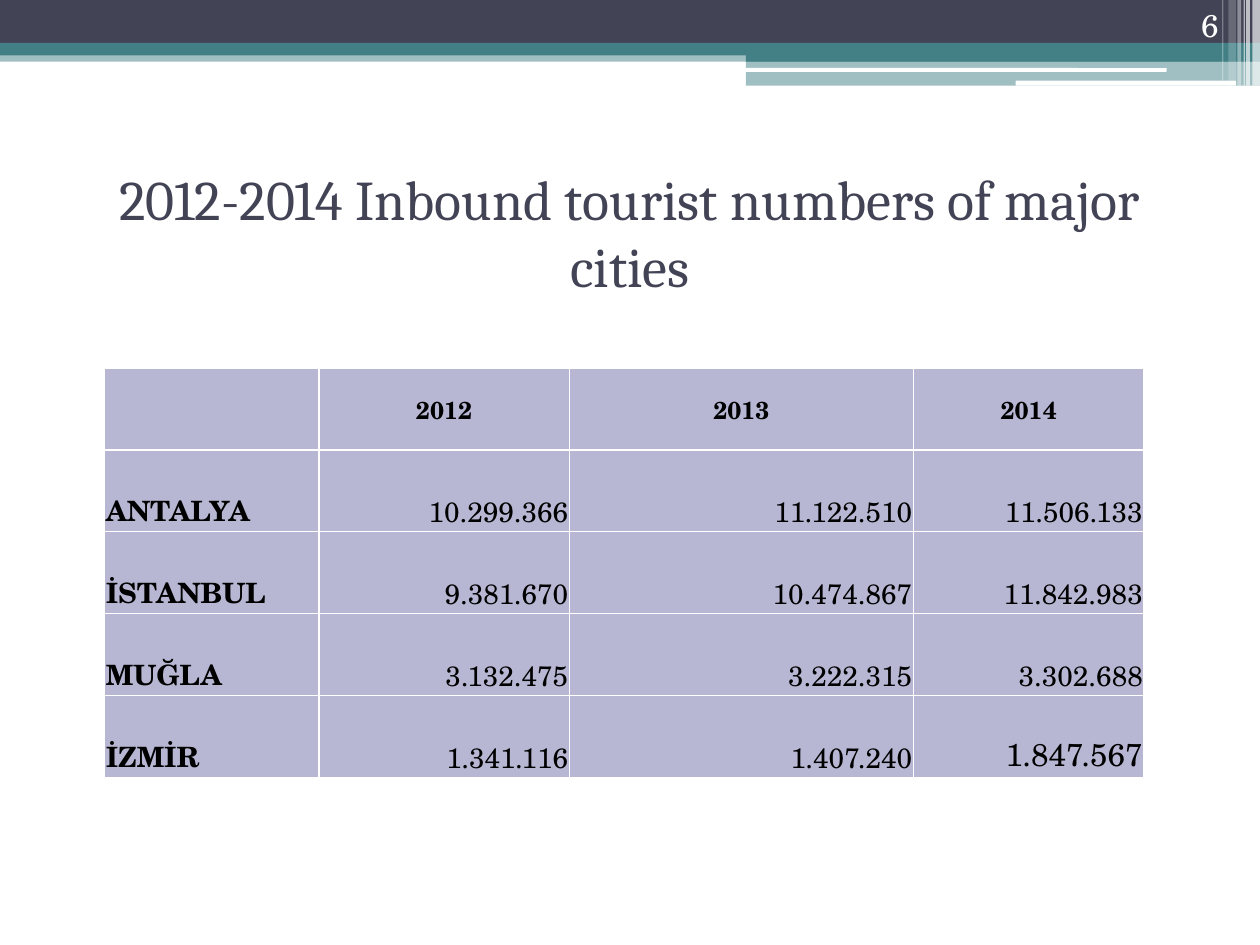
from lxml.etree import SubElement
from pptx import Presentation
from pptx.dml.color import RGBColor
from pptx.enum.shapes import MSO_SHAPE
from pptx.enum.text import MSO_ANCHOR, PP_ALIGN
from pptx.oxml.ns import qn
from pptx.util import Inches, Pt

NAVY = RGBColor(0x42, 0x44, 0x56)
TEAL = RGBColor(0x43, 0x80, 0x86)
LAVENDER = RGBColor(0xB7, 0xB7, 0xD4)
WHITE = RGBColor(0xFF, 0xFF, 0xFF)
BLACK = RGBColor(0, 0, 0)
BODY_FONT = "TeX Gyre Schola"


def format_text(paragraph, font_name, size, color, alignment, bold=False):
    paragraph.alignment = alignment
    for run in paragraph.runs:
        run.font.name = font_name
        run.font.size = Pt(size)
        run.font.color.rgb = color
        run.font.bold = bold


def add_cell_borders(cell):
    properties = cell._tc.get_or_add_tcPr()
    for side in ("a:lnL", "a:lnR", "a:lnT", "a:lnB"):
        line = SubElement(properties, qn(side), w=str(Pt(1)))
        fill = SubElement(line, qn("a:solidFill"))
        SubElement(fill, qn("a:srgbClr"), val=str(WHITE))


presentation = Presentation()
presentation.slide_width = Inches(10)
presentation.slide_height = Inches(7.5)
slide = presentation.slides.add_slide(presentation.slide_layouts[5])

# Header bands: left, top, width, height, color, opacity in percent
RECTANGLE, ROUNDED = MSO_SHAPE.RECTANGLE, MSO_SHAPE.ROUNDED_RECTANGLE
bands = [
    (RECTANGLE, 0, 0.4, 10, 0.09, TEAL, 50),
    (RECTANGLE, 0, 0, 10, 0.34, NAVY, 100),
    (RECTANGLE, 0, 0.34, 10, 0.1, TEAL, 100),
    (RECTANGLE, 5.92, 0.39, 4.08, 0.1, TEAL, 100),
    (RECTANGLE, 5.92, 0.48, 4.08, 0.2, TEAL, 50),
    (ROUNDED, 5.91, 0.54, 3.35, 0.03, WHITE, 100),
    (ROUNDED, 8.06, 0.64, 1.75, 0.04, WHITE, 100),
]
# Vertical stripes at the right edge: left, width, height, opacity
stripes = [
    (9.94, 0.06, 0.68, 65),
    (9.89, 0.03, 0.68, 65),
    (9.87, 0.01, 0.68, 60),
    (9.82, 0.03, 0.68, 40),
    (9.75, 0.06, 0.64, 20),
    (9.7, 0.01, 0.64, 30),
]
bands += [(RECTANGLE, left, 0, width, height, WHITE, opacity)
          for left, width, height, opacity in stripes]

for kind, left, top, width, height, color, opacity in bands:
    shape = slide.shapes.add_shape(
        kind, Inches(left), Inches(top), Inches(width), Inches(height))
    shape.shadow.inherit = False
    shape.fill.solid()
    shape.fill.fore_color.rgb = color
    shape.line.fill.background()
    if opacity < 100:
        color_element = shape._element.spPr.find(qn("a:solidFill"))[0]
        SubElement(color_element, qn("a:alpha"), val=str(opacity * 1000))

title = slide.shapes.title
title.left, title.top = Inches(0.5), Inches(1.25)
title.width, title.height = Inches(9), Inches(1.17)
title.text_frame.text = "2012-2014 Inbound tourist numbers of major cities"
title.text_frame.vertical_anchor = MSO_ANCHOR.MIDDLE
format_text(title.text_frame.paragraphs[0], "Cambria", 32, NAVY, PP_ALIGN.CENTER)

page_number = slide.shapes.add_textbox(
    Inches(8.94), Inches(0), Inches(0.83), Inches(0.4))
page_number.text_frame.word_wrap = True
page_number.text_frame.vertical_anchor = MSO_ANCHOR.BOTTOM
page_number.text_frame.text = "6"
format_text(page_number.text_frame.paragraphs[0], BODY_FONT, 18, WHITE, PP_ALIGN.RIGHT)

visitors = [
    ("", "2012", "2013", "2014"),
    ("ANTALYA", "10.299.366", "11.122.510", "11.506.133"),
    ("İSTANBUL", "9.381.670", "10.474.867", "11.842.983"),
    ("MUĞLA", "3.132.475", "3.222.315", "3.302.688"),
    ("İZMİR", "1.341.116", "1.407.240", "1.847.567"),
]
column_widths = [1.7, 1.99, 2.73, 1.83]
table = slide.shapes.add_table(
    len(visitors), len(column_widths),
    Inches(0.83), Inches(2.92), Inches(8.25), Inches(3.25)).table
for column, width in zip(table.columns, column_widths):
    column.width = Inches(width)

for row_index, row in enumerate(visitors):
    for column_index, text in enumerate(row):
        cell = table.cell(row_index, column_index)
        add_cell_borders(cell)
        cell.fill.solid()
        cell.fill.fore_color.rgb = LAVENDER
        cell.margin_left = cell.margin_right = cell.margin_top = Inches(0.01)
        cell.margin_bottom = 0
        cell.text_frame.text = text
        is_header, is_city = row_index == 0, column_index == 0
        cell.vertical_anchor = MSO_ANCHOR.MIDDLE if is_header else MSO_ANCHOR.BOTTOM
        if is_header:
            size, alignment = 14, PP_ALIGN.CENTER
        else:
            size, alignment = 16, PP_ALIGN.LEFT if is_city else PP_ALIGN.RIGHT
        if text == "1.847.567":
            size = 18
        format_text(cell.text_frame.paragraphs[0], BODY_FONT, size, BLACK,
                    alignment, is_header or is_city)

presentation.save("out.pptx")
